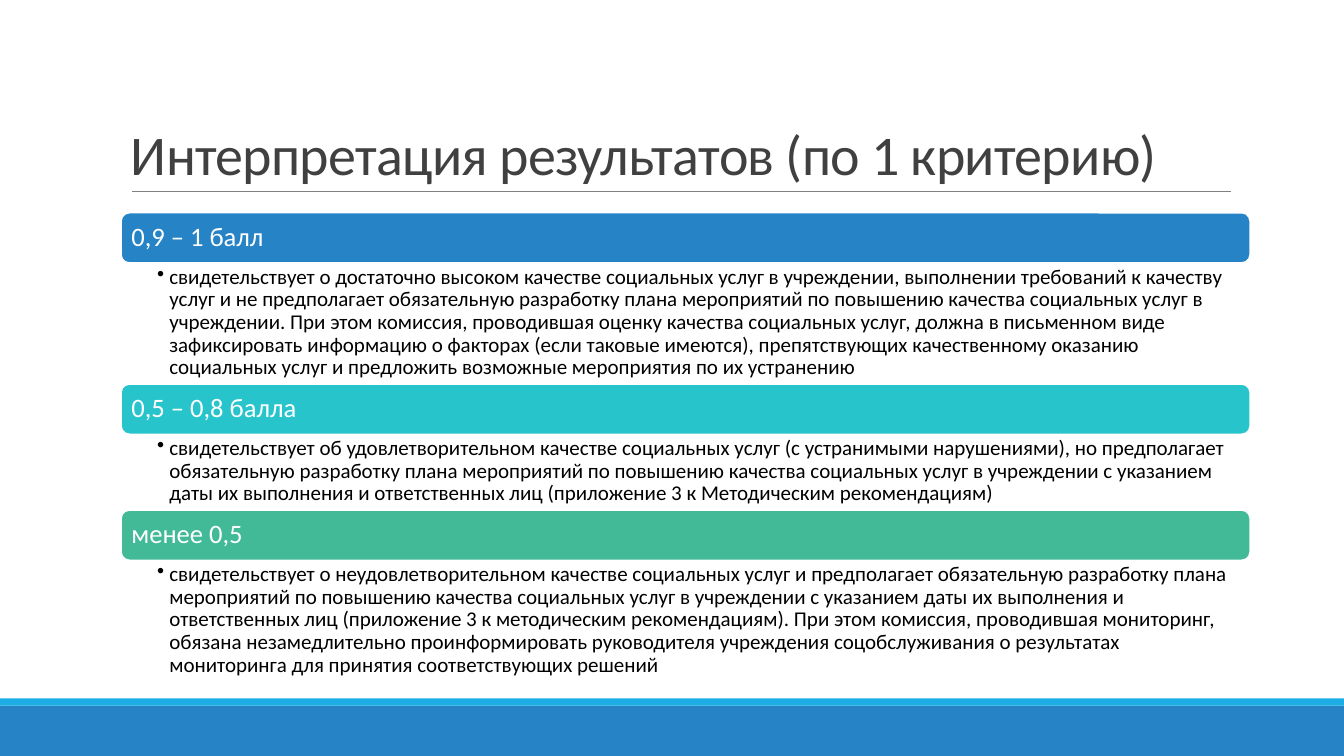
from lxml.etree import SubElement
from pptx import Presentation
from pptx.dml.color import RGBColor
from pptx.enum.shapes import MSO_CONNECTOR as Connector, MSO_SHAPE as Shape
from pptx.enum.text import MSO_ANCHOR as Anchor, PP_ALIGN as Align
from pptx.oxml.ns import qn
from pptx.util import Inches, Pt

WIDTH, HEIGHT = 13.33, 7.5
FONT = "Calibri"
WHITE = RGBColor(0xFF, 0xFF, 0xFF)
BLACK = RGBColor(0x00, 0x00, 0x00)
DARK = RGBColor(0x40, 0x40, 0x40)
GRAY = RGBColor(0x80, 0x80, 0x80)
BLUE = RGBColor(0x26, 0x83, 0xC6)
SKY = RGBColor(0x1C, 0xAD, 0xE4)
TEAL = RGBColor(0x28, 0xC4, 0xCC)
GREEN = RGBColor(0x42, 0xBA, 0x97)

TITLE = "Интерпретация результатов (по 1 критерию)"
LEFT = 1.2
BAR_HEIGHT = 0.5

# Score range, bar colour, height of the explanation, explanation
LEVELS = [
    ("0,9 – 1 балл", BLUE, 1.2,
     "свидетельствует о достаточно высоком качестве социальных услуг в учреждении, "
     "выполнении требований к качеству услуг и не предполагает обязательную разработку "
     "плана мероприятий по повышению качества социальных услуг в учреждении. При этом "
     "комиссия, проводившая оценку качества социальных услуг, должна в письменном виде "
     "зафиксировать информацию о факторах (если таковые имеются), препятствующих "
     "качественному оказанию социальных услуг и предложить возможные мероприятия по их "
     "устранению"),
    ("0,5 – 0,8 балла", TEAL, 0.75,
     "свидетельствует об удовлетворительном качестве социальных услуг (с устранимыми "
     "нарушениями), но предполагает обязательную разработку плана мероприятий по "
     "повышению качества социальных услуг в учреждении с указанием даты их выполнения и "
     "ответственных лиц (приложение 3 к Методическим рекомендациям)"),
    ("менее 0,5", GREEN, 1.2,
     "свидетельствует о неудовлетворительном качестве социальных услуг и предполагает "
     "обязательную разработку плана мероприятий по повышению качества социальных услуг в "
     "учреждении с указанием даты их выполнения и ответственных лиц (приложение 3 к "
     "методическим рекомендациям). При этом комиссия, проводившая мониторинг, обязана "
     "незамедлительно проинформировать руководителя учреждения соцобслуживания о "
     "результатах мониторинга для принятия соответствующих решений"),
]


def inches(box):
    return [Inches(length) for length in box]


def write(shape, text, size, color, anchor=Anchor.TOP, insets=(0.1, 0.05, 0.1, 0.05),
          line_spacing=0.9, tracking=None, bullet=None, hang=0.12):
    frame = shape.text_frame
    frame.word_wrap = True
    frame.vertical_anchor = anchor
    (frame.margin_left, frame.margin_top,
     frame.margin_right, frame.margin_bottom) = inches(insets)
    para = frame.paragraphs[0]
    para.alignment = Align.LEFT
    para.line_spacing = line_spacing
    span = para.add_run()
    span.text = text
    span.font.name = FONT
    span.font.size = Pt(size)
    span.font.color.rgb = color
    if tracking:
        span.font._element.set("spc", str(int(tracking * 100)))
    if bullet:
        para.level = 1
        props = para._p.get_or_add_pPr()
        props.set("marL", str(Inches(hang)))
        props.set("indent", str(-Inches(hang)))
        SubElement(props, qn("a:buChar")).set("char", bullet)


def add_block(page, kind, box, fill, outline=None):
    block = page.shapes.add_shape(kind, *inches(box))
    block.shadow.inherit = False
    block.fill.solid()
    block.fill.fore_color.rgb = fill
    if outline:
        block.line.color.rgb = outline
        block.line.width = Pt(1.25)
    else:
        block.line.fill.background()
    return block


def add_footer(page, top, height, stripe=0.07):
    add_block(page, Shape.RECTANGLE, (0, top + stripe, WIDTH, height - stripe), BLUE)
    add_block(page, Shape.RECTANGLE, (0, top, WIDTH, stripe), SKY)


def add_title(page, left, top, width, height):
    # Rule under the heading
    bottom = top + height
    rule = page.shapes.add_connector(
        Connector.STRAIGHT, *inches((left + 0.11, bottom, left + width + 0.01, bottom)))
    rule.line.color.rgb = GRAY
    rule.line.width = Pt(0.5)
    SubElement(rule._element.spPr, qn("a:effectLst"))
    # Heading
    heading = page.shapes.add_textbox(*inches((left, top, width, height)))
    write(heading, TITLE, 40, DARK, anchor=Anchor.BOTTOM, line_spacing=0.85, tracking=-0.5)


def add_levels(page, left, top, width):
    for score, color, body_height, meaning in LEVELS:
        # Coloured score bar
        bar = add_block(page, Shape.ROUNDED_RECTANGLE,
                        (left, top, width, BAR_HEIGHT), color, outline=WHITE)
        write(bar, score, 19, WHITE, anchor=Anchor.MIDDLE, insets=(0.08,) * 4)
        top += BAR_HEIGHT
        # Explanation below it
        body = page.shapes.add_textbox(*inches((left, top, width, body_height)))
        write(body, meaning, 15, BLACK, insets=(0.36, 0.03, 0.15, 0.03), bullet="•")
        top += body_height


def main():
    deck = Presentation()
    deck.slide_width, deck.slide_height = inches((WIDTH, HEIGHT))
    page = deck.slides.add_slide(deck.slide_layouts[6])
    add_footer(page, top=6.93, height=HEIGHT - 6.93)
    add_title(page, LEFT, 0.31, 11, 1.59)
    add_levels(page, LEFT, 2.11, 11.2)
    deck.save("out.pptx")


if __name__ == "__main__":
    main()
